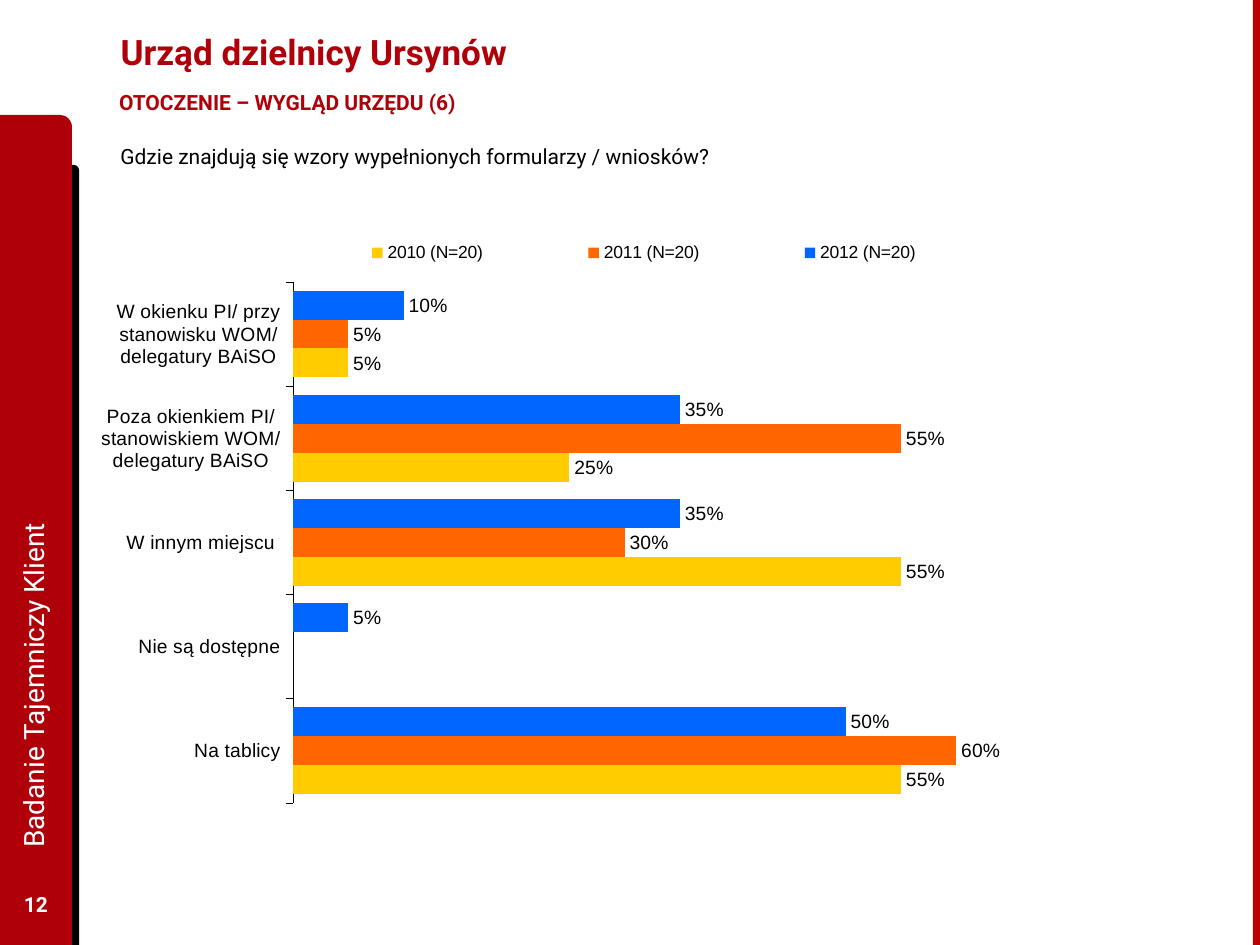
from lxml import etree
from pptx import Presentation, util as u
from pptx.chart.data import CategoryChartData
from pptx.dml.color import RGBColor
from pptx.enum import chart as ch, shapes, text
from pptx.oxml import parse_xml

PX = 914400 // 126
RED = RGBColor(0xAF, 0x00, 0x0A)
EDGE = RGBColor(0xBD, 0x00, 0x00)
BLACK = RGBColor(0, 0, 0)
WHITE = RGBColor(255, 255, 255)
BLUE = RGBColor(0x00, 0x66, 0xFF)
ORANGE = RGBColor(0xFF, 0x66, 0x00)
YELLOW = RGBColor(0xFF, 0xCC, 0x00)
NS = "http://schemas.openxmlformats.org/drawingml/2006/chart"


def write(box, words, size, color, bold=False, anchor=text.MSO_ANCHOR.MIDDLE):
    frame = box.text_frame
    frame.text = words
    frame.vertical_anchor = anchor
    frame.word_wrap = True
    para = frame.paragraphs[0]
    para.alignment = text.PP_ALIGN.LEFT
    font = para.font
    font.name, font.size, font.bold = "Roboto", u.Pt(size), bold
    font.color.rgb = color
    return frame


def layout(x, y, w, h, inner=False):
    target = '<c:layoutTarget val="inner"/>' if inner else ""
    return parse_xml(
        f'<c:layout xmlns:c="{NS}"><c:manualLayout>{target}'
        '<c:xMode val="edge"/><c:yMode val="edge"/>'
        f'<c:x val="{x}"/><c:y val="{y}"/><c:w val="{w}"/><c:h val="{h}"/>'
        '</c:manualLayout></c:layout>')


deck = Presentation()
deck.slide_width, deck.slide_height = 1260 * PX, 945 * PX
slide = deck.slides.add_slide(deck.slide_layouts[5])
items = slide.shapes

# Side panel, its black backing and the right edge
ROUND = shapes.MSO_SHAPE.ROUND_1_RECTANGLE
RECT = shapes.MSO_SHAPE.RECTANGLE
for kind, x, y, w, h, color in (
        (ROUND, 49, 165, 30, 780, BLACK),
        (ROUND, 0, 115, 72, 830, RED),
        (RECT, 1253, 0, 7, 945, EDGE)):
    part = items.add_shape(kind, x * PX, y * PX, w * PX, h * PX)
    part.shadow.inherit = False
    part.fill.solid()
    part.fill.fore_color.rgb = color
    part.line.fill.background()

# Title
title = items.title
title.left, title.top, title.width, title.height = 108 * PX, 6 * PX, 979 * PX, 91 * PX
write(title, "Urząd dzielnicy Ursynów", 20, RED, True)

# Side label and page number
side = items.add_textbox(-330 * PX, 465 * PX, 726 * PX, 64 * PX)
side.rotation = 270
write(side, "Badanie Tajemniczy Klient", 16, WHITE)
page = items.add_textbox(0, 879 * PX, 72 * PX, 50 * PX)
frame = write(page, "12", 12, WHITE, True)
frame.paragraphs[0].alignment = text.PP_ALIGN.CENTER

# Subtitle and question
sub = items.add_textbox(94 * PX, 83 * PX, 485 * PX, 42 * PX)
frame = write(sub, "OTOCZENIE – WYGLĄD URZĘDU (6)", 12, RED, True, text.MSO_ANCHOR.TOP)
frame.margin_left = frame.margin_right = u.Inches(0.2)
frame.word_wrap = False
ask = items.add_textbox(108 * PX, 137 * PX, 815 * PX, 38 * PX)
write(ask, "Gdzie znajdują się wzory wypełnionych formularzy / wniosków?", 12, BLACK,
      anchor=text.MSO_ANCHOR.TOP)

# Chart data
years = (
    ("2012 (N=20)", (0.1, 0.35, 0.35, 0.05, 0.5), BLUE),
    ("2011 (N=20)", (0.05, 0.55, 0.3, None, 0.6), ORANGE),
    ("2010 (N=20)", (0.05, 0.25, 0.55, None, 0.55), YELLOW))
data = CategoryChartData(number_format="0%")
data.categories = (
    "W okienku PI/ przy stanowisku WOM/ delegatury BAiSO",
    "Poza okienkiem PI/ stanowiskiem WOM/ delegatury BAiSO",
    "W innym miejscu ", "Nie są dostępne", "Na tablicy")
for name, vals, color in years:
    data.add_series(name, vals)
chart = items.add_chart(ch.XL_CHART_TYPE.BAR_CLUSTERED, 101 * PX, 233 * PX,
                        1143 * PX, 570 * PX, data).chart
chart.has_title = False
chart.font.name, chart.font.size = "Arial", u.Pt(11)
chart.font.color.rgb = BLACK

# Bars and value labels
plot = chart.plots[0]
plot.gap_width, plot.overlap = 60, 0
plot.vary_by_categories = False
for series, (name, vals, color) in zip(plot.series, years):
    series.format.fill.solid()
    series.format.fill.fore_color.rgb = color
    series.invert_if_negative = False
    labels = series.data_labels
    labels.show_value = True
    labels.number_format, labels.number_format_is_linked = "0%", False
    labels.position = ch.XL_LABEL_POSITION.OUTSIDE_END

# Axes
cats, scale = chart.category_axis, chart.value_axis
cats.reverse_order = True
cats.major_tick_mark = ch.XL_TICK_MARK.OUTSIDE
cats.format.line.color.rgb = BLACK
cats.format.line.width = u.Pt(0.25)
scale.minimum_scale, scale.maximum_scale = 0, 0.7
scale.has_major_gridlines = False
scale.visible = False

# Legend and plot area places
chart.has_legend = True
legend = chart.legend
legend.position = ch.XL_LEGEND_POSITION.TOP
legend.include_in_layout = False
legend.font.name, legend.font.size = "Arial", u.Pt(10)
legend.font.color.rgb = BLACK
root = chart.element
area = root.find(f".//{{{NS}}}plotArea")
old = area.find(f"{{{NS}}}layout")
if old is not None:
    area.remove(old)
area.insert(0, layout(0.168, 0.089, 0.677, 0.914, True))
key = root.find(f".//{{{NS}}}legend")
old = key.find(f"{{{NS}}}layout")
if old is not None:
    key.remove(old)
key.find(f"{{{NS}}}legendPos").addnext(layout(0.15, 0.01, 0.65, 0.05))

deck.save("out.pptx")
